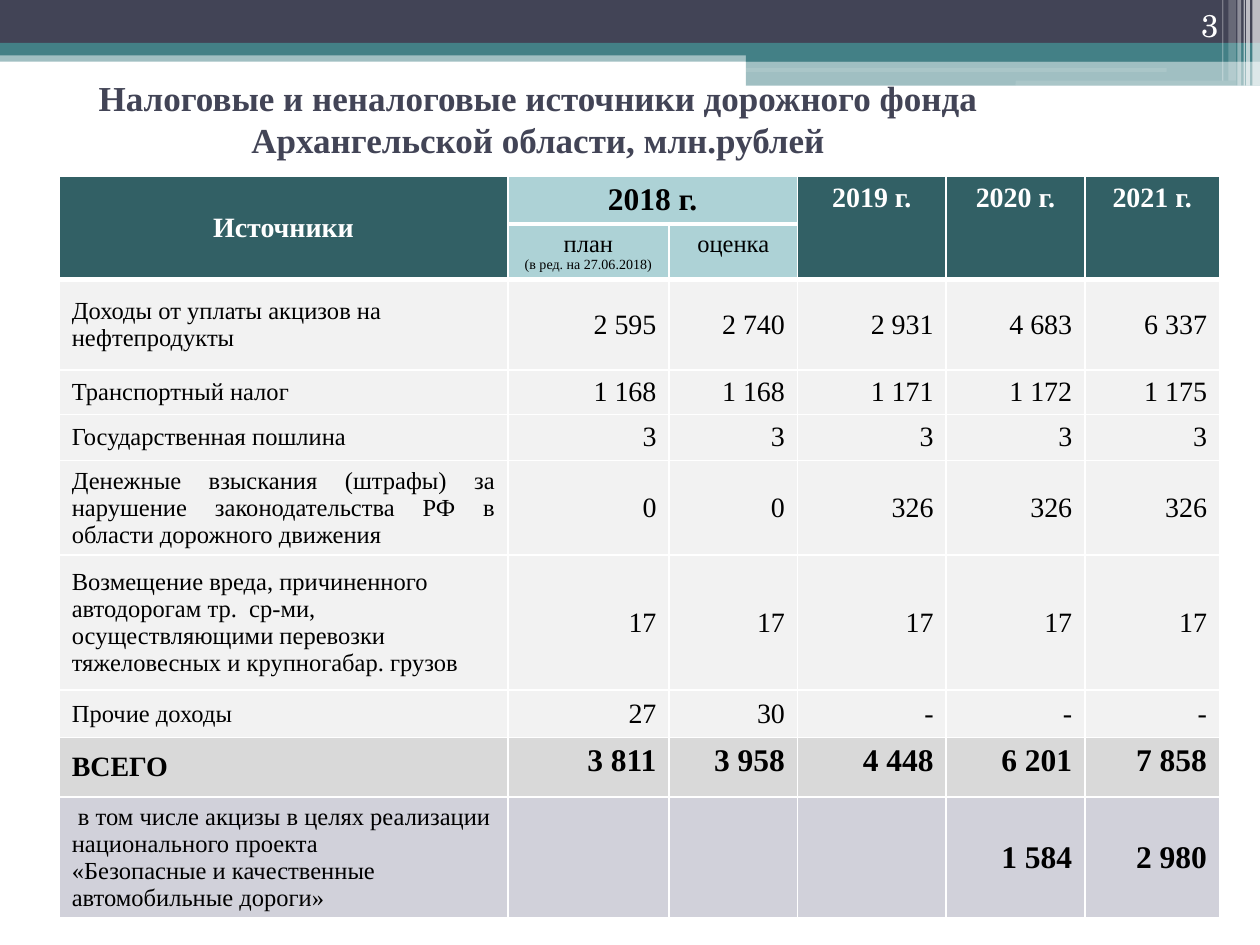
from lxml.etree import SubElement
from pptx import Presentation
from pptx.dml.color import RGBColor
from pptx.enum.shapes import MSO_SHAPE as Shape
from pptx.enum.text import MSO_ANCHOR as Anchor, MSO_AUTO_SIZE as AutoSize, PP_ALIGN as Align
from pptx.oxml import parse_xml
from pptx.oxml.ns import nsdecls, qn
from pptx.util import Inches, Pt

WIDTH, HEIGHT = Inches(10), Inches(7.5)
SERIF = "Times New Roman"
COLORS = {
    "navy": "424456", "teal": "438086", "white": "FFFFFF", "black": "000000",
    "header": "326065", "subheader": "ADD2D6", "row": "F2F2F2",
    "total": "D9D9D9", "project": "D1D1DA",
}

BANDS = [
    (0, 5.33, 100, 1.2, "teal", 50),
    (0, 0, 100, 4.53, "navy", 100),
    (0, 4.53, 100, 1.33, "teal", 100),
    (59.2, 5.2, 40.8, 1.33, "teal", 100),
    (59.2, 6.4, 40.8, 2.67, "teal", 50),
]
HIGHLIGHTS = [(59.1, 7.2, 33.5, 0.4, "white", 11), (80.6, 8.53, 17.5, 0.53, "white", 11)]
STRIPES = [
    (99.4, 0.6, 9.07, 65), (98.9, 0.3, 9.07, 65), (98.7, 0.1, 9.07, 60),
    (98.2, 0.3, 9.07, 40), (97.5, 0.6, 8.53, 20), (97, 0.1, 8.53, 30),
]

TITLE = "Налоговые и неналоговые источники дорожного фонда Архангельской области, млн.рублей"
COLUMN_SHARES = [35.6, 12.8, 10.2, 11.8, 11, 10.7]
ROW_SHARES = [4.9, 5.8, 9.6, 4.7, 4.9, 10, 14.3, 5, 6.3, 12.7]
YEARS = ["2019 г.", "2020 г.", "2021 г."]
SOURCES = [
    ("Доходы от уплаты акцизов на нефтепродукты", Align.LEFT,
     ["2 595", "2 740", "2 931", "4 683", "6 337"]),
    ("Транспортный налог", Align.LEFT, ["1 168", "1 168", "1 171", "1 172", "1 175"]),
    ("Государственная пошлина", Align.JUSTIFY, ["3"] * 5),
    ("Денежные взыскания (штрафы) за нарушение законодательства РФ в области дорожного движения",
     Align.JUSTIFY, ["0", "0", "326", "326", "326"]),
    ("Возмещение вреда, причиненного автодорогам тр.  ср-ми, "
     "осуществляющими перевозки тяжеловесных и крупногабар. грузов", Align.LEFT, ["17"] * 5),
    ("Прочие доходы", Align.LEFT, ["27", "30", "-", "-", "-"]),
]
TOTALS = ["3 811", "3 958", "4 448", "6 201", "7 858"]
PROJECT = [
    " в том числе акцизы в целях реализации",
    "национального проекта",
    "«Безопасные и качественные",
    "автомобильные дороги»",
]
PROJECT_VALUES = ["", "", "", "1 584", "2 980"]


def across(share):
    return round(WIDTH * share / 100)


def down(share):
    return round(HEIGHT * share / 100)


def area(left, top, width, height):
    return across(left), down(top), across(width), down(height)


def rgb(color):
    return RGBColor.from_string(COLORS[color])


def write(frame, *lines, size=14, sizes=None, color="black", bold=False,
          font=SERIF, align=Align.LEFT):
    for index, line in enumerate(lines):
        paragraph = frame.paragraphs[0] if index == 0 else frame.add_paragraph()
        paragraph.alignment = align
        run = paragraph.add_run()
        run.text = line
        run.font.name = font
        run.font.size = Pt(sizes[index] if sizes else size)
        run.font.bold = bold
        run.font.color.rgb = rgb(color)


def add_band(slide, left, top, width, height, color, opacity, preset=Shape.RECTANGLE):
    band = slide.shapes.add_shape(preset, *area(left, top, width, height))
    band.shadow.inherit = False
    band.line.fill.background()
    band.fill.solid()
    band.fill.fore_color.rgb = rgb(color)
    if opacity < 100:
        srgb = band.fill._xPr.find(qn("a:solidFill"))[0]
        SubElement(srgb, qn("a:alpha")).set("val", str(opacity * 1000))


def add_decoration(slide):
    for band in BANDS:
        add_band(slide, *band)
    for highlight in HIGHLIGHTS:
        add_band(slide, *highlight, preset=Shape.ROUNDED_RECTANGLE)
    for left, width, height, opacity in STRIPES:
        add_band(slide, left, 0, width, height, "white", opacity)


def add_title(slide):
    title = slide.shapes.title
    title.left, title.top, title.width, title.height = area(-2.3, 7.33, 90, 10.4)
    frame = title.text_frame
    frame.word_wrap = True
    frame.auto_size = AutoSize.NONE
    frame.vertical_anchor = Anchor.MIDDLE
    frame.margin_left = frame.margin_right = across(3)
    write(frame, TITLE, size=20, color="navy", bold=True, align=Align.CENTER)
    slide.shapes._spTree.append(title._element)


def add_page_number(slide):
    frame = slide.shapes.add_textbox(*area(89.4, 0, 8.3, 5.33)).text_frame
    frame.word_wrap = True
    frame.vertical_anchor = Anchor.BOTTOM
    write(frame, "3", size=18, color="white", font="TeX Gyre Schola", align=Align.RIGHT)


def set_borders(cell, bottom):
    properties = cell._tc.get_or_add_tcPr()
    for index, (side, points) in enumerate([("L", 1), ("R", 1), ("T", 1), ("B", bottom)]):
        properties.insert(index, parse_xml(
            f'<a:ln{side} {nsdecls("a")} w="{Pt(points)}"><a:solidFill>'
            f'<a:srgbClr val="{COLORS["white"]}"/></a:solidFill></a:ln{side}>'))


def fill_cell(cell, *lines, fill, anchor=Anchor.MIDDLE, **text_format):
    cell.fill.solid()
    cell.fill.fore_color.rgb = rgb(fill)
    cell.vertical_anchor = anchor
    write(cell.text_frame, *[line for line in lines if line], **text_format)


def fill_header(table):
    heading = dict(fill="header", size=16, color="white", bold=True, align=Align.CENTER)
    current = dict(fill="subheader", anchor=Anchor.TOP, align=Align.CENTER)
    table.cell(0, 0).merge(table.cell(1, 0))
    table.cell(0, 1).merge(table.cell(0, 2))
    fill_cell(table.cell(0, 0), "Источники", **heading)
    fill_cell(table.cell(0, 1), "2018 г.", size=18, bold=True, **current)
    fill_cell(table.cell(1, 1), "план", "(в ред. на 27.06.2018)", sizes=[14, 8], **current)
    fill_cell(table.cell(1, 2), "оценка", **current)
    for column, year in enumerate(YEARS, start=3):
        table.cell(0, column).merge(table.cell(1, column))
        fill_cell(table.cell(0, column), year, anchor=Anchor.TOP, **heading)


def fill_values(table, row, values, **text_format):
    for column, value in enumerate(values, start=1):
        fill_cell(table.cell(row, column), value, align=Align.RIGHT, **text_format)


def add_sources_table(slide):
    frame = slide.shapes.add_table(len(ROW_SHARES), len(COLUMN_SHARES),
                                   *area(4.7, 18.67, sum(COLUMN_SHARES), sum(ROW_SHARES)))
    table = frame.table
    table.first_row = table.horz_banding = False
    for column, share in zip(table.columns, COLUMN_SHARES):
        column.width = across(share)
    for row, share in zip(table.rows, ROW_SHARES):
        row.height = down(share)

    fill_header(table)
    for row, (source, align, values) in enumerate(SOURCES, start=2):
        fill_cell(table.cell(row, 0), source, fill="row", align=align)
        fill_values(table, row, values, fill="row", size=16)
    fill_cell(table.cell(8, 0), "ВСЕГО", fill="total", size=16, bold=True)
    fill_values(table, 8, TOTALS, fill="total", size=18, bold=True, anchor=Anchor.TOP)
    fill_cell(table.cell(9, 0), *PROJECT, fill="project", anchor=Anchor.BOTTOM)
    fill_values(table, 9, PROJECT_VALUES, fill="project", size=18, bold=True)

    for index, row in enumerate(table.rows):
        for cell in row.cells:
            set_borders(cell, bottom=3 if index < 2 else 1)


def main():
    deck = Presentation()
    deck.slide_width, deck.slide_height = WIDTH, HEIGHT
    slide = deck.slides.add_slide(deck.slide_layouts[5])
    add_decoration(slide)
    add_title(slide)
    add_sources_table(slide)
    add_page_number(slide)
    deck.save("out.pptx")


if __name__ == "__main__":
    main()
